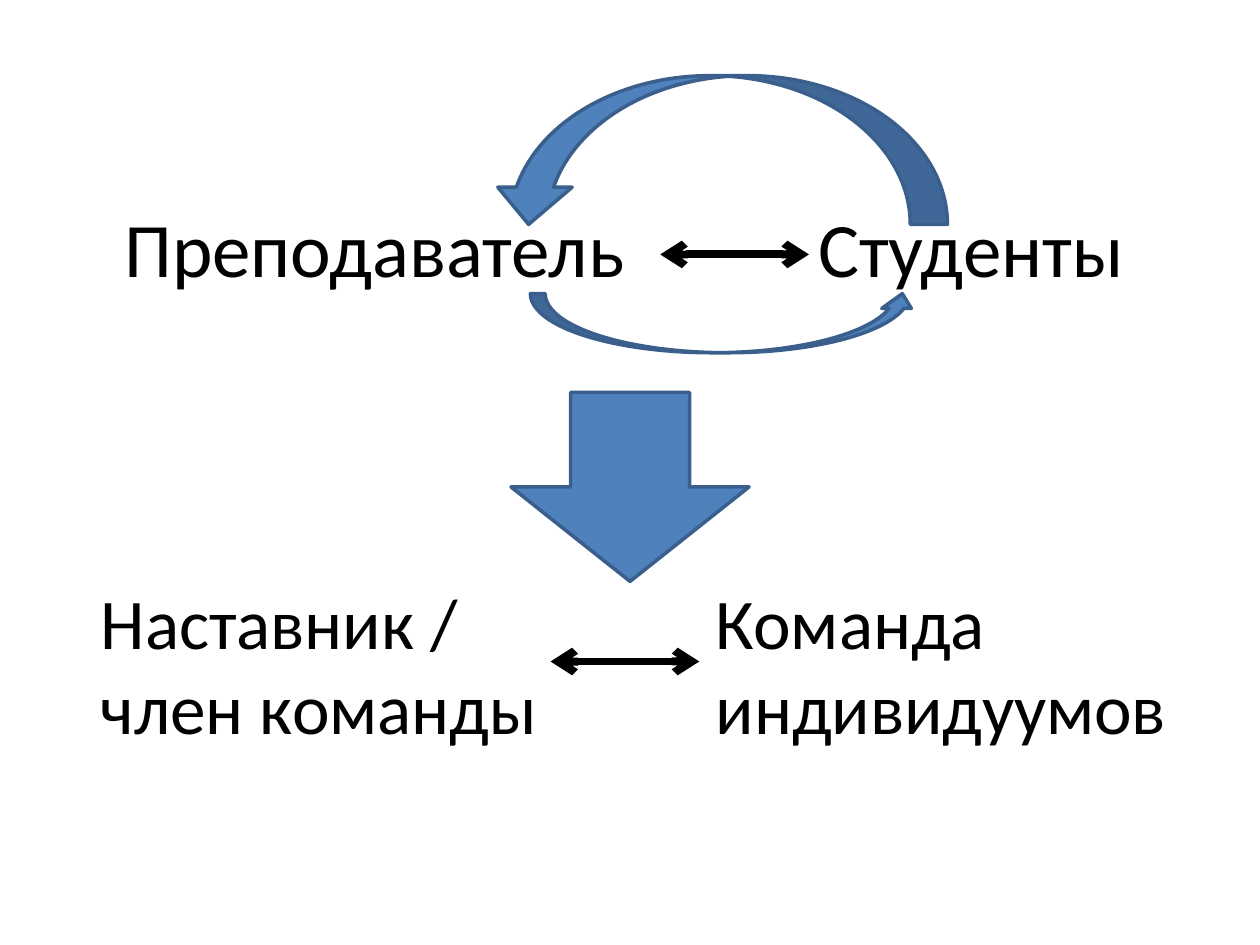
import pptx
import pptx.dml.color
import pptx.enum.shapes
import pptx.enum.text
import pptx.oxml.ns
import pptx.util
from dataclasses import dataclass
from lxml import etree

Pt = pptx.util.Pt
Shapes = pptx.enum.shapes.MSO_SHAPE
COLORS = {"text": "000000", "arrow": "4F81BD", "outline": "3A5F8C"}
FONT = "Calibri"


@dataclass
class Label:
    left: float
    lines: list[str]


@dataclass
class BlockArrow:
    preset: Shapes
    left: float
    top: float
    width: float
    height: float
    rotation: float = 0


@dataclass
class Exchange:
    left: float
    y: float


LABELS = [
    Label(54, ["Наставник /", "член команды"]),
    Label(405.4, ["Команда индивидуумов"]),
]
EXCHANGES = [Exchange(377.3, 145.4), Exchange(314.6, 378)]
BLOCK_ARROWS = [
    BlockArrow(Shapes.RIGHT_ARROW, 306, 210.2, 108, 136.1, 90),
    BlockArrow(Shapes.CURVED_UP_ARROW, 280.8, 43.2, 260.6, 85, 180),
    BlockArrow(Shapes.CURVED_UP_ARROW, 303.1, 167.8, 221, 33.8),
]


def color(name: str) -> pptx.dml.color.RGBColor:
    return pptx.dml.color.RGBColor.from_string(COLORS[name])


def write_text(frame, lines: list[str], size: float, margin: float) -> None:
    frame.text = "\n".join(lines)
    frame.word_wrap = True
    frame.auto_size = pptx.enum.text.MSO_AUTO_SIZE.NONE
    frame.vertical_anchor = pptx.enum.text.MSO_ANCHOR.MIDDLE
    frame.margin_left = Pt(margin)
    for para in frame.paragraphs:
        para.alignment = pptx.enum.text.PP_ALIGN.LEFT
        para.font.name = FONT
        para.font.size = Pt(size)
        para.font.color.rgb = color("text")


def add_title(page) -> None:
    title = page.shapes.title
    title.left, title.top, title.width, title.height = Pt(54), Pt(82.8), Pt(612), Pt(115.9)
    write_text(title.text_frame, ["Преподаватель\tСтуденты"], 44, 17)
    properties = title.text_frame.paragraphs[0]._p.get_or_add_pPr()
    stops = etree.Element(pptx.oxml.ns.qn("a:tabLst"))
    etree.SubElement(stops, pptx.oxml.ns.qn("a:tab"), pos=str(Pt(396.5)), algn="l")
    properties.find(pptx.oxml.ns.qn("a:defRPr")).addprevious(stops)


def add_label(page, label: Label) -> None:
    box = page.shapes.add_textbox(Pt(label.left), Pt(321.1), Pt(283.7), Pt(115.9))
    write_text(box.text_frame, label.lines, 40.7, 3.6)


def add_exchange(page, exchange: Exchange) -> None:
    connector = page.shapes.add_connector(
        pptx.enum.shapes.MSO_CONNECTOR.STRAIGHT,
        Pt(exchange.left), Pt(exchange.y), Pt(exchange.left + 85), Pt(exchange.y),
    )
    connector.line.color.rgb = color("text")
    connector.line.width = Pt(4.5)
    line = connector.line._get_or_add_ln()
    for end in ("a:headEnd", "a:tailEnd"):
        etree.SubElement(line, pptx.oxml.ns.qn(end), type="arrow")
    etree.SubElement(connector._element.spPr, pptx.oxml.ns.qn("a:effectLst"))


def add_block_arrow(page, arrow: BlockArrow) -> None:
    shape = page.shapes.add_shape(
        arrow.preset, Pt(arrow.left), Pt(arrow.top), Pt(arrow.width), Pt(arrow.height)
    )
    shape.rotation = arrow.rotation
    shape.shadow.inherit = False
    shape.fill.solid()
    shape.fill.fore_color.rgb = color("arrow")
    shape.line.color.rgb = color("outline")
    shape.line.width = Pt(2)


def main() -> None:
    deck = pptx.Presentation()
    deck.slide_width, deck.slide_height = Pt(720), Pt(540)
    page = deck.slides.add_slide(deck.slide_layouts.get_by_name("Title Only"))
    add_title(page)
    for label in LABELS:
        add_label(page, label)
    for exchange in EXCHANGES:
        add_exchange(page, exchange)
    for arrow in BLOCK_ARROWS:
        add_block_arrow(page, arrow)
    deck.save("out.pptx")


if __name__ == "__main__":
    main()
